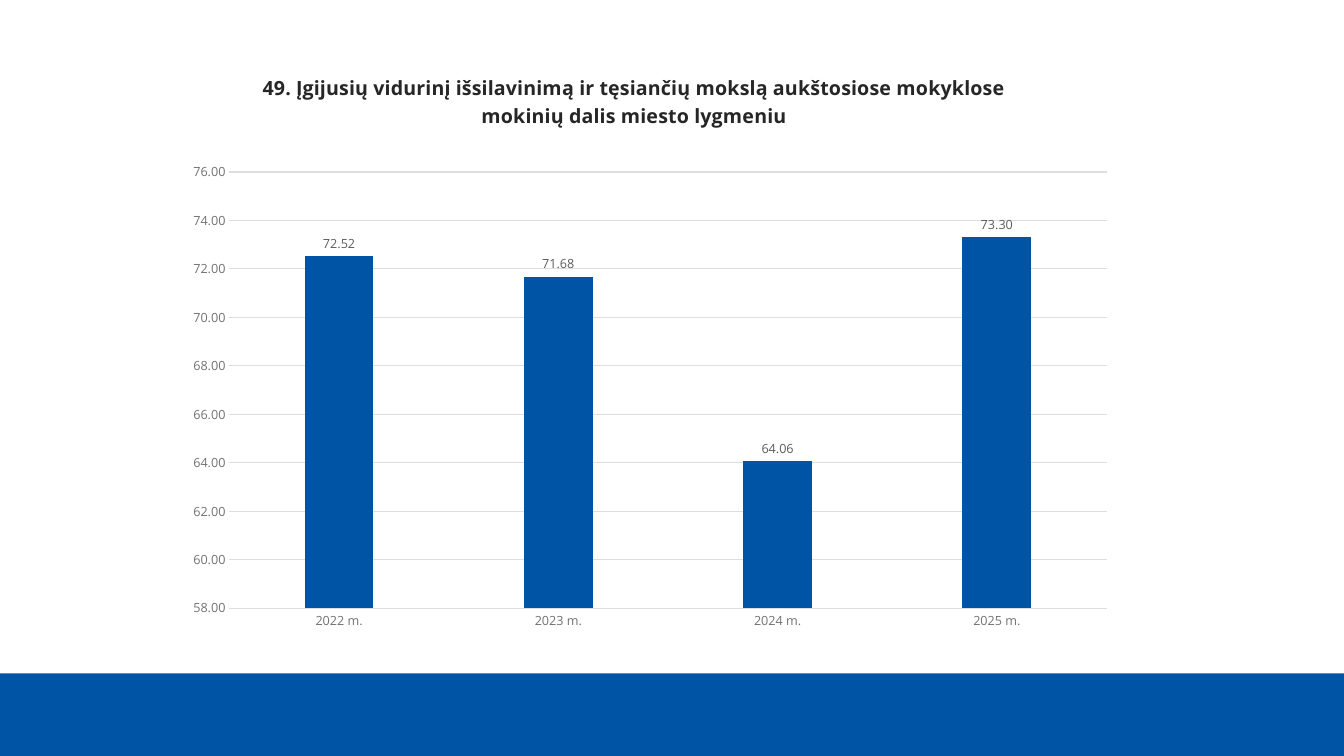
"""Build a slide with a column chart of school leavers continuing to higher education."""
import pptx
import pptx.chart.data
import pptx.dml.color
import pptx.enum.chart
import pptx.enum.shapes
import pptx.oxml
import pptx.oxml.ns
import pptx.util
from pptx.util import Inches

TITLE = ("49. Įgijusių vidurinį išsilavinimą ir tęsiančių mokslą aukštosiose mokyklose "
         "mokinių dalis miesto lygmeniu")
SHARES = {"2022 m.": 72.52, "2023 m.": 71.68, "2024 m.": 64.06, "2025 m.": 73.30}
BLUE, DARK, GREY, LABEL_GREY, RULE = "0054A5", "262626", "727272", "5C5C5C", "DEDEDE"
WIDTH, HEIGHT, BAND_HEIGHT = 13.33, 7.5, 0.82
CHART_FRAME = (1.53, 0.51, 9.45, 5.81)
TITLE_SPOT = {"x": 0.11, "y": 0.03}
PLOT_SPOT = {"x": 0.079, "y": 0.206, "w": 0.921, "h": 0.745}


def color(value):
    return pptx.dml.color.RGBColor.from_string(value)


def style_font(font, size, value, bold=False):
    font.name = "Open Sans"
    font.size = pptx.util.Pt(size)
    font.bold = bold
    font.color.rgb = color(value)


def style_line(line):
    line.color.rgb = color(RULE)
    line.width = pptx.util.Pt(0.75)


def make_layout(spot, inner=False):
    target = '<c:layoutTarget val="inner"/>' if inner else ""
    modes = "".join(f'<c:{key}Mode val="edge"/>' for key in spot if key in "xy")
    values = "".join(f'<c:{key} val="{value}"/>' for key, value in spot.items())
    return pptx.oxml.parse_xml(
        f'<c:layout {pptx.oxml.ns.nsdecls("c")}><c:manualLayout>'
        f'{target}{modes}{values}</c:manualLayout></c:layout>')


def add_band(page):
    band = page.shapes.add_shape(
        pptx.enum.shapes.MSO_SHAPE.RECTANGLE, 0, Inches(HEIGHT - BAND_HEIGHT),
        Inches(WIDTH), Inches(BAND_HEIGHT))
    band.shadow.inherit = False
    band.fill.solid()
    band.fill.fore_color.rgb = color(BLUE)
    band.line.fill.background()


def add_title(chart):
    chart.has_title = True
    frame = chart.chart_title.text_frame
    frame.text = TITLE
    style_font(frame.paragraphs[0].runs[0].font, 14, DARK, bold=True)
    title = chart.chart_title._element
    for old in title.findall(pptx.oxml.ns.qn("c:layout")):
        title.remove(old)
    title.find(pptx.oxml.ns.qn("c:tx")).addnext(make_layout(TITLE_SPOT))
    chart.chart_title.include_in_layout = False


def style_axes(chart):
    for axis in (chart.category_axis, chart.value_axis):
        axis.major_tick_mark = pptx.enum.chart.XL_TICK_MARK.NONE
        axis.minor_tick_mark = pptx.enum.chart.XL_TICK_MARK.NONE
        style_font(axis.tick_labels.font, 9, GREY)
    style_line(chart.category_axis.format.line)
    scale = chart.value_axis
    scale.minimum_scale, scale.maximum_scale, scale.major_unit = 58, 76, 2
    scale.tick_labels.number_format = "0.00"
    scale.tick_labels.number_format_is_linked = False
    scale.format.line.fill.background()
    style_line(scale.major_gridlines.format.line)


def style_columns(plot):
    plot.gap_width, plot.overlap = 219, -27
    plot.vary_by_categories = False
    columns = plot.series[0]
    columns.format.fill.solid()
    columns.format.fill.fore_color.rgb = color(BLUE)
    labels = columns.data_labels
    labels.show_value = True
    labels.number_format = "0.00"
    labels.number_format_is_linked = False
    labels.position = pptx.enum.chart.XL_LABEL_POSITION.OUTSIDE_END
    style_font(labels.font, 9, LABEL_GREY)


def add_share_chart(page):
    data = pptx.chart.data.CategoryChartData(number_format="0.00")
    data.categories = list(SHARES)
    data.add_series("Series 1", list(SHARES.values()))
    chart = page.shapes.add_chart(
        pptx.enum.chart.XL_CHART_TYPE.COLUMN_CLUSTERED,
        *map(Inches, CHART_FRAME), data).chart
    style_font(chart.font, 10, DARK)
    chart.has_legend = False
    add_title(chart)
    style_axes(chart)
    style_columns(chart.plots[0])
    area = chart._chartSpace.chart.plotArea
    for old in area.findall(pptx.oxml.ns.qn("c:layout")):
        area.remove(old)
    area.insert(0, make_layout(PLOT_SPOT, inner=True))


def main():
    deck = pptx.Presentation()
    deck.slide_width, deck.slide_height = Inches(WIDTH), Inches(HEIGHT)
    page = deck.slides.add_slide(deck.slide_layouts[6])
    add_band(page)
    add_share_chart(page)
    deck.save("out.pptx")


if __name__ == "__main__":
    main()
